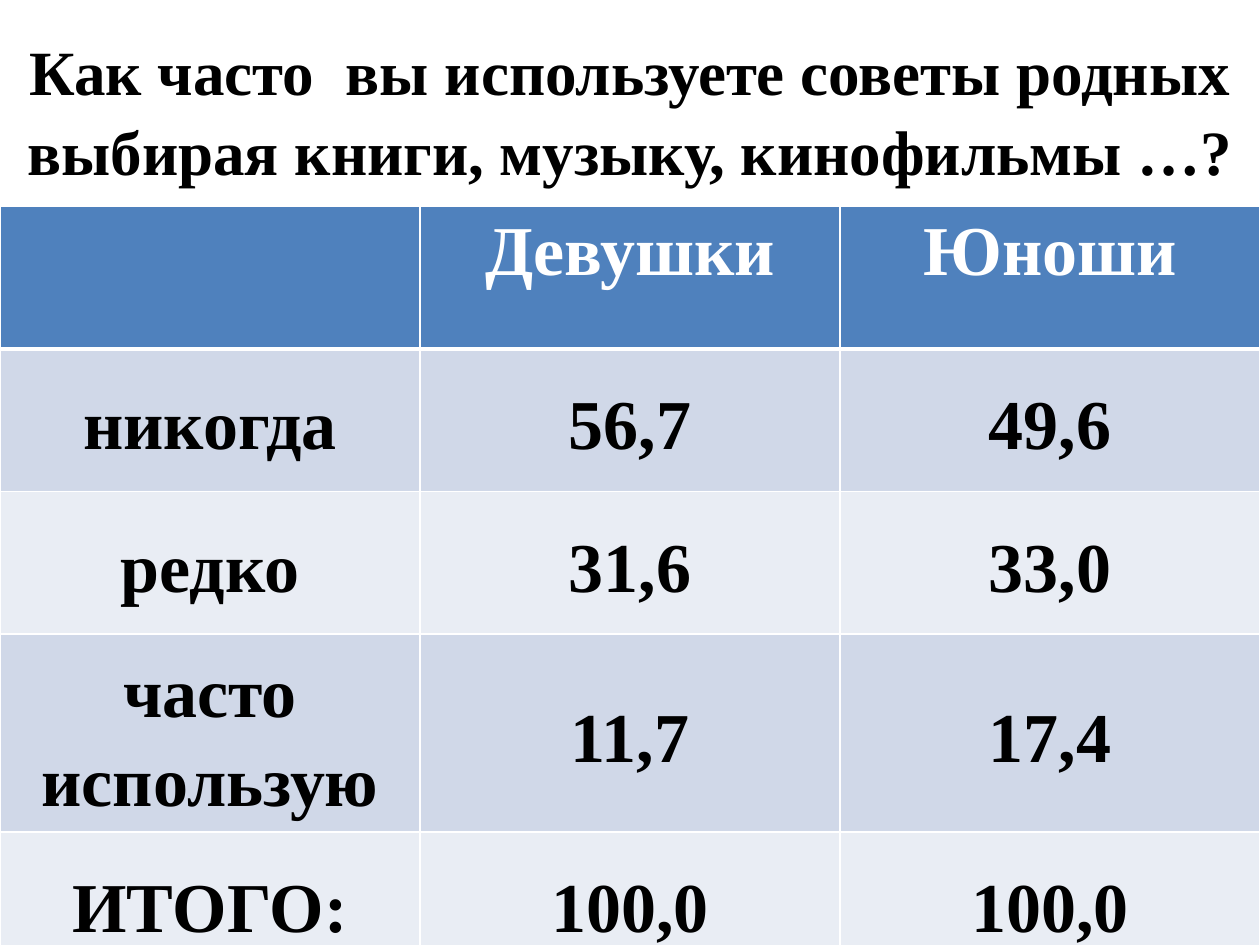
from lxml.etree import SubElement
from pptx import Presentation
from pptx.dml.color import RGBColor
from pptx.enum.text import MSO_ANCHOR, PP_ALIGN
from pptx.oxml.ns import qn
from pptx.util import Inches, Pt

BLACK = RGBColor(0x00, 0x00, 0x00)
WHITE = RGBColor(0xFF, 0xFF, 0xFF)
HEADER_BLUE = RGBColor(0x4F, 0x81, 0xBD)
BANDS = (RGBColor(0xD0, 0xD8, 0xE8), RGBColor(0xE9, 0xED, 0xF4))
FONT = "Times New Roman"

TITLE = "Как часто  вы используете советы родных выбирая книги, музыку, кинофильмы …?"
ANSWERS = (
    ("", "Девушки", "Юноши"),
    ("никогда", "56,7", "49,6"),
    ("редко", "31,6", "33,0"),
    ("часто использую", "11,7", "17,4"),
    ("ИТОГО:", "100,0", "100,0"),
)


def write_text(frame, text, size=40, color=BLACK, spacing=None):
    para = frame.paragraphs[0]
    para.alignment = PP_ALIGN.CENTER
    para.line_spacing = spacing
    if not text:
        return
    span = para.add_run()
    span.text = text
    span.font.name = FONT
    span.font.size = Pt(size)
    span.font.bold = True
    span.font.color.rgb = color


def add_title(page):
    box = page.shapes.add_textbox(0, 0, Inches(10), Inches(1.72))
    frame = box.text_frame
    frame.word_wrap = True
    frame.vertical_anchor = MSO_ANCHOR.MIDDLE
    write_text(frame, TITLE, size=36, spacing=1.05)


def set_borders(cell, **widths):
    properties = cell._tc.get_or_add_tcPr()
    for side in "LRTB":
        width = Pt(widths.get(side, 1))
        line = SubElement(properties, qn(f"a:ln{side}"), w=str(width))
        fill = SubElement(line, qn("a:solidFill"))
        SubElement(fill, qn("a:srgbClr"), val=str(WHITE))


def fill_cell(cell, color):
    cell.fill.solid()
    cell.fill.fore_color.rgb = color


def format_header_cell(cell, text):
    set_borders(cell, B=3)
    fill_cell(cell, HEADER_BLUE)
    write_text(cell.text_frame, text, color=WHITE)


def format_body_cell(cell, text, row):
    set_borders(cell, T=3 if row == 1 else 1)
    fill_cell(cell, BANDS[(row - 1) % 2])
    cell.vertical_anchor = MSO_ANCHOR.MIDDLE
    cell.margin_left = cell.margin_right = Inches(0.02)
    cell.margin_top = cell.margin_bottom = Inches(0.02)
    write_text(cell.text_frame, text, spacing=1.15)


def add_answer_table(page):
    rows, columns = len(ANSWERS), len(ANSWERS[0])
    row_height = Inches(1.13)
    table = page.shapes.add_table(
        rows, columns, 0, Inches(1.64), Inches(10), row_height * rows
    ).table
    for table_row in table.rows:
        table_row.height = row_height
    for row, texts in enumerate(ANSWERS):
        for column, text in enumerate(texts):
            cell = table.cell(row, column)
            if row == 0:
                format_header_cell(cell, text)
            else:
                format_body_cell(cell, text, row)


def main():
    deck = Presentation()
    deck.slide_width = Inches(10)
    deck.slide_height = Inches(7.5)
    page = deck.slides.add_slide(deck.slide_layouts[6])
    add_title(page)
    add_answer_table(page)
    deck.save("out.pptx")


if __name__ == "__main__":
    main()
